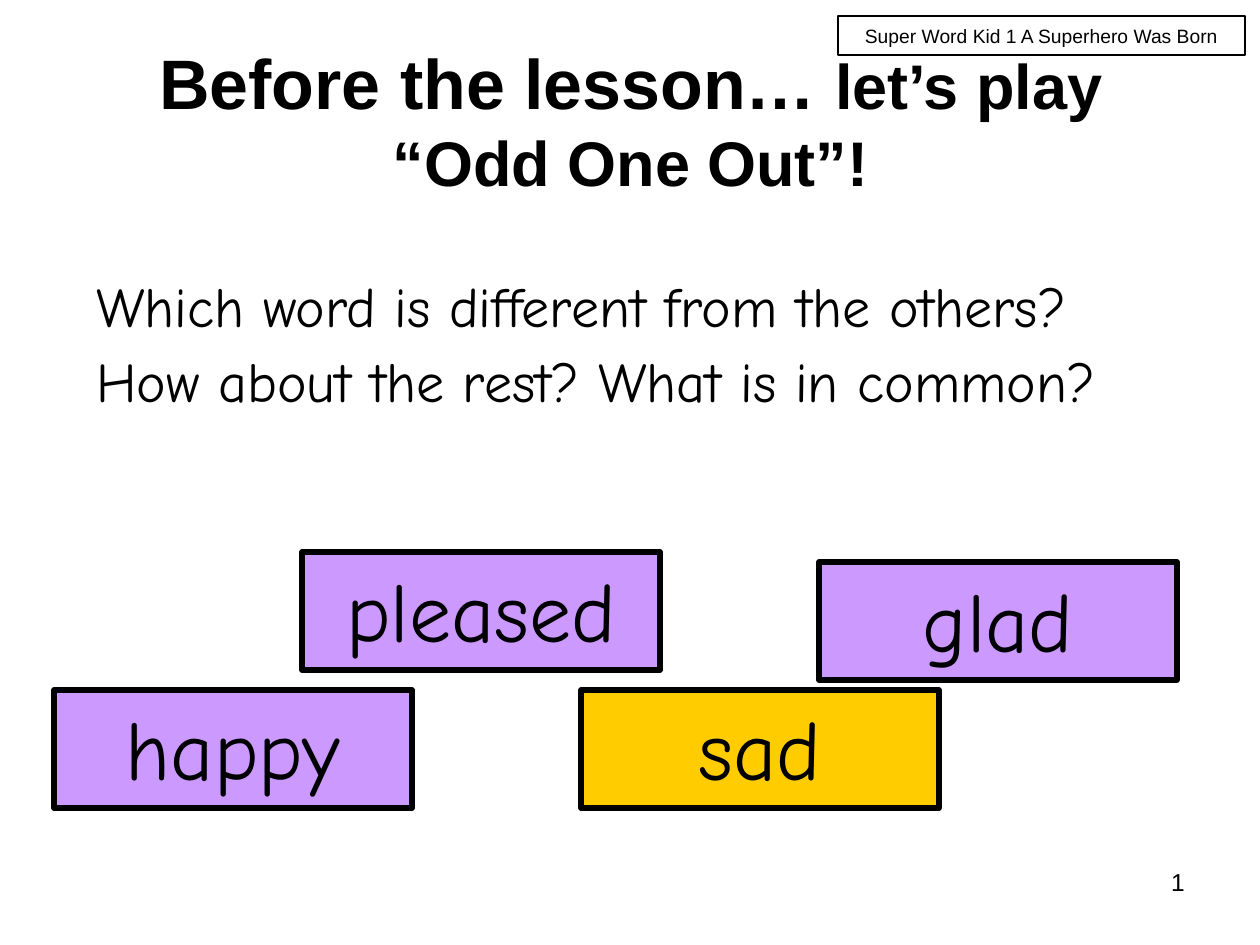
from dataclasses import dataclass

import pptx
import pptx.dml.color
import pptx.enum.shapes
import pptx.enum.text
import pptx.util

PX = 914400 / 126  # EMU per px
COLORS = {"black": "000000", "purple": "CC99FF", "gold": "FFCC00"}
ALIGN = pptx.enum.text.PP_ALIGN
ANCHOR = pptx.enum.text.MSO_ANCHOR


@dataclass
class Label:
    runs: list[tuple[str, int]]  # text and size in points
    left: int
    top: int
    width: int
    height: int
    font: str = "Arial"
    align: ALIGN = ALIGN.LEFT
    anchor: ANCHOR = ANCHOR.TOP
    bold: bool = False


@dataclass
class Card:
    word: str
    left: int
    top: int
    color: str = "purple"


CARD_W, CARD_H = 358, 118
HEADER = Label([("Super Word Kid 1 A Superhero Was Born", 11)],
               838, 16, 407, 39, align=ALIGN.CENTER)
LABELS = [
    Label([("1", 14)], 903, 861, 294, 66, align=ALIGN.RIGHT),
    Label([("Before the lesson… ", 40), ("let’s play “Odd One Out”!", 36)],
          64, 55, 1134, 129, align=ALIGN.CENTER, anchor=ANCHOR.MIDDLE, bold=True),
    Label([("Which word is different from the others?", 32)],
          84, 265, 1121, 79, "Comic Neue"),
    Label([("How about the rest? What is in common?", 32)],
          84, 340, 1091, 82, "Comic Neue"),
]
CARDS = [
    Card("sad", 581, 690, "gold"),
    Card("pleased", 302, 552),
    Card("glad", 819, 562),
    Card("happy", 54, 690),
]


def px(n: int) -> pptx.util.Emu:
    return pptx.util.Emu(round(n * PX))


def rgb(name: str) -> pptx.dml.color.RGBColor:
    return pptx.dml.color.RGBColor.from_string(COLORS[name])


def write(sp, label: Label) -> None:
    tf = sp.text_frame
    tf.word_wrap = True
    tf.vertical_anchor = label.anchor
    p = tf.paragraphs[0]
    p.alignment = label.align
    p.font.name = label.font
    p.font.bold = label.bold
    p.font.color.rgb = rgb("black")
    if len(label.runs) == 1:
        p.font.size = pptx.util.Pt(label.runs[0][1])
    for text, size in label.runs:
        r = p.add_run()
        r.text = text
        if len(label.runs) > 1:
            r.font.size = pptx.util.Pt(size)


def add_label(s, label: Label) -> None:
    sp = s.shapes.add_textbox(px(label.left), px(label.top),
                              px(label.width), px(label.height))
    write(sp, label)


def add_box(s, label: Label, line_pt: float, fill: str | None = None):
    """Draw a black-edged rectangle holding the label."""
    sp = s.shapes.add_shape(pptx.enum.shapes.MSO_SHAPE.RECTANGLE,
                            px(label.left), px(label.top),
                            px(label.width), px(label.height))
    sp.shadow.inherit = False
    if fill:
        sp.fill.solid()
        sp.fill.fore_color.rgb = rgb(fill)
    else:
        sp.fill.background()
    sp.line.color.rgb = rgb("black")
    sp.line.width = pptx.util.Pt(line_pt)
    write(sp, label)
    return sp


def add_card(s, card: Card) -> None:
    label = Label([(card.word, 48)], card.left, card.top, CARD_W, CARD_H,
                  "Comic Neue", ALIGN.CENTER)
    add_box(s, label, 3, card.color)


def main() -> None:
    prs = pptx.Presentation()
    prs.slide_width, prs.slide_height = px(1260), px(945)
    s = prs.slides.add_slide(prs.slide_layouts[6])
    tf = add_box(s, HEADER, 0.75).text_frame
    tf.margin_top = tf.margin_bottom = px(8)
    for label in LABELS:
        add_label(s, label)
    for card in CARDS:
        add_card(s, card)
    prs.save("out.pptx")


if __name__ == "__main__":
    main()
